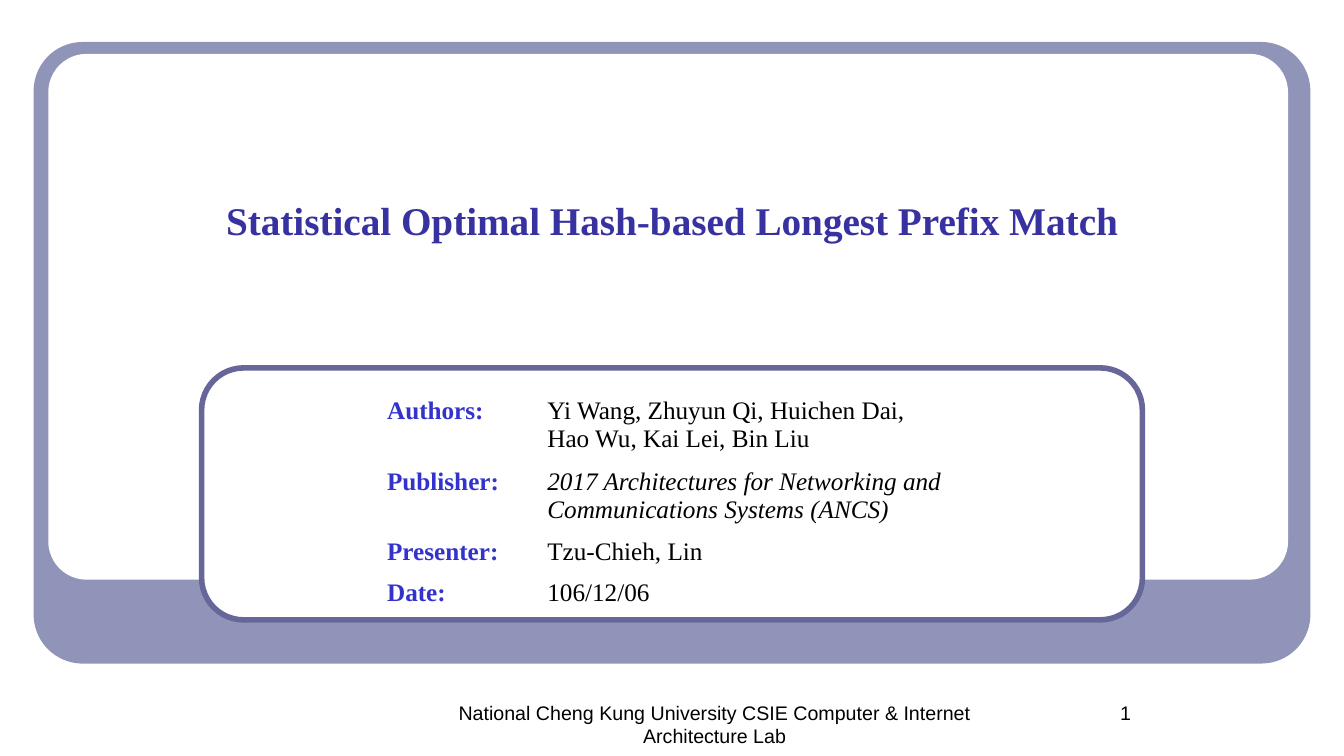
import pptx
import pptx.dml.color
import pptx.enum.shapes
import pptx.enum.text
import pptx.util

Pt = pptx.util.Pt
SERIF, SANS = "Times New Roman", "Arial"

SLIDE_SIZE = (960, 540)
PANELS = [
    ((24, 30, 912, 444), 0.079, "9094B8", None),
    ((34.5, 38.5, 885.6, 375.6), 0.073, "FFFFFF", None),
    ((144, 262.8, 672, 180), 0.167, "FFFFFF", "666699"),
]
TITLE = "Statistical Optimal Hash-based Longest Prefix Match"
TITLE_BOX = (72, 67.7, 816, 178.6)
DETAILS = [
    ("Authors:", ["Yi Wang, Zhuyun Qi, Huichen Dai,", "Hao Wu, Kai Lei, Bin Liu"], False, 47.2),
    ("Publisher:", ["2017 Architectures for Networking and Communications Systems (ANCS)"], True, 47.2),
    ("Presenter:", ["Tzu-Chieh, Lin"], False, 29.4),
    ("Date:", ["106/12/06"], False, 29.4),
]
DETAILS_CORNER = (269.3, 280)
DETAILS_WIDTHS = (114.5, 367.2)
FOOTERS = [
    ("National Cheng Kung University CSIE Computer & Internet Architecture Lab", (298.8, 496.8, 423.4, 36)),
    ("1", (720, 496.8, 168, 36)),
]


def color(value):
    return pptx.dml.color.RGBColor.from_string(value)


def points(values):
    return [Pt(value) for value in values]


def write(frame, lines, size=18, font=SERIF, fill="000000", bold=False, italic=False, align="LEFT"):
    frame.word_wrap = True
    for index, line in enumerate(lines):
        paragraph = frame.add_paragraph() if index else frame.paragraphs[0]
        paragraph.alignment = getattr(pptx.enum.text.PP_ALIGN, align)
        run = paragraph.add_run()
        run.text = line
        run.font.size, run.font.name = Pt(size), font
        run.font.bold, run.font.italic = bold, italic
        run.font.color.rgb = color(fill)


def add_panel(slide, box, corner, fill, outline):
    panel = slide.shapes.add_shape(pptx.enum.shapes.MSO_SHAPE.ROUNDED_RECTANGLE, *points(box))
    panel.adjustments[0] = corner
    panel.shadow.inherit = False
    panel.fill.solid()
    panel.fill.fore_color.rgb = color(fill)
    if outline:
        panel.line.color.rgb = color(outline)
        panel.line.width = Pt(4)
    else:
        panel.line.fill.background()


def add_title(slide):
    title = slide.shapes.title
    title.left, title.top, title.width, title.height = points(TITLE_BOX)
    title.text_frame.vertical_anchor = pptx.enum.text.MSO_ANCHOR.MIDDLE
    write(title.text_frame, [TITLE], size=28, fill="3732A0", bold=True, align="CENTER")
    title.element.getparent().append(title.element)


def add_details(slide):
    heights = [row[-1] for row in DETAILS]
    box = (*DETAILS_CORNER, sum(DETAILS_WIDTHS), sum(heights))
    details = slide.shapes.add_table(len(DETAILS), 2, *points(box)).table
    details.first_row = details.horz_banding = False
    for column, width in zip(details.columns, DETAILS_WIDTHS):
        column.width = Pt(width)
    for row, (label, lines, italic, height) in zip(details.rows, DETAILS):
        row.height = Pt(height)
        for cell in row.cells:
            cell.fill.background()
        write(row.cells[0].text_frame, [label], fill="3333CC", bold=True)
        write(row.cells[1].text_frame, lines, italic=italic)


def main():
    deck = pptx.Presentation()
    deck.slide_width, deck.slide_height = points(SLIDE_SIZE)
    slide = deck.slides.add_slide(deck.slide_layouts[0])
    subtitle = slide.placeholders[1].element
    subtitle.getparent().remove(subtitle)
    for panel in PANELS:
        add_panel(slide, *panel)
    add_title(slide)
    for footer, box in FOOTERS:
        frame = slide.shapes.add_textbox(*points(box)).text_frame
        write(frame, [footer], size=14, font=SANS, align="CENTER")
    add_details(slide)
    deck.save("out.pptx")


if __name__ == "__main__":
    main()
